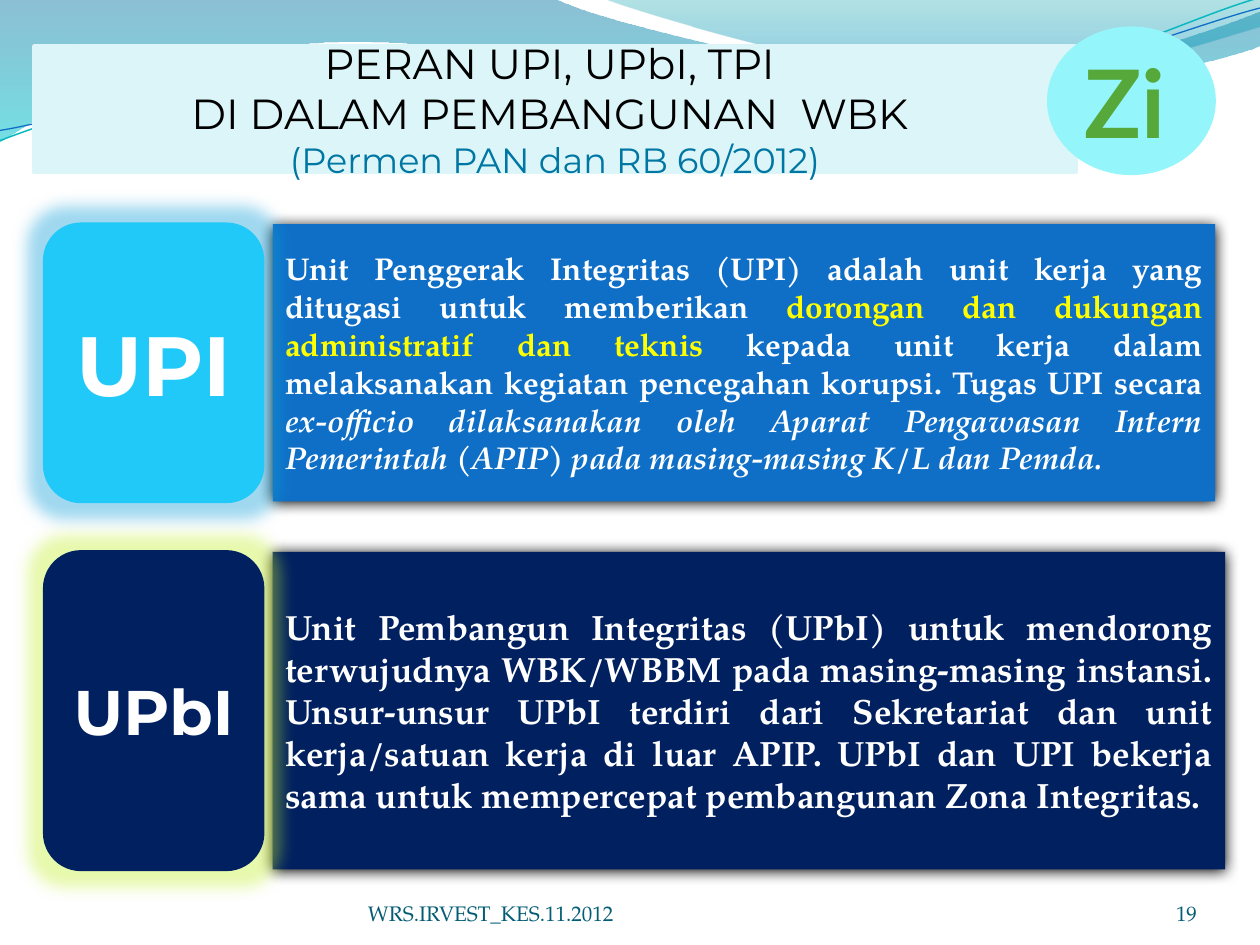
from lxml.etree import SubElement
from pptx import Presentation
from pptx.dml.color import RGBColor
from pptx.enum.shapes import MSO_SHAPE as SHAPE
from pptx.enum.text import MSO_ANCHOR as ANCHOR, MSO_AUTO_SIZE as AUTO, PP_ALIGN as ALIGN
from pptx.oxml.ns import qn
from pptx.util import Inches, Pt

COLS, ROWS = 100, 75
UNIT = Inches(10) // COLS
HEAD_FONT, BODY_FONT, BADGE_FONT = "Montserrat", "TeX Gyre Pagella", "Lato"

BLACK = RGBColor(0x00, 0x00, 0x00)
WHITE = RGBColor(0xFF, 0xFF, 0xFF)
YELLOW = RGBColor(0xFF, 0xFF, 0x00)
BLUE = RGBColor(0x0F, 0x6F, 0xC6)
SKY = RGBColor(0x20, 0xC9, 0xF8)
NAVY = RGBColor(0x00, 0x20, 0x60)
PALE = RGBColor(0xDB, 0xF5, 0xF9)
SUBTITLE = RGBColor(0x00, 0x76, 0xA3)
AQUA = RGBColor(0x94, 0xF5, 0xFA)
GREEN = RGBColor(0x55, 0xA8, 0x39)
FOOTER = RGBColor(0x04, 0x5D, 0x75)
TEAL = RGBColor(0x0A, 0xB8, 0xBF)
SKY_GLOW = RGBColor(0x0F, 0x9E, 0xD9)
LIME_GLOW = RGBColor(0xC4, 0xF0, 0x30)
BIG_WAVE = ((RGBColor(0x00, 0x74, 0xA1), 0, 45), (RGBColor(0x00, 0xC6, 0xCF), 1, 55))
SMALL_WAVE = ((RGBColor(0x00, 0xA1, 0xA9), 0, 30), (RGBColor(0x00, 0x8B, 0xBF), 0.8, 45))

UPI_TEXT = [
    ("Unit Penggerak Integritas (UPI) adalah unit kerja yang ditugasi untuk memberikan ", WHITE, False),
    ("dorongan dan dukungan administratif dan teknis ", YELLOW, False),
    ("kepada unit kerja dalam melaksanakan kegiatan pencegahan korupsi. Tugas UPI secara ", WHITE, False),
    ("ex-officio dilaksanakan oleh Aparat Pengawasan Intern Pemerintah (APIP) "
     "pada masing-masing K/L dan Pemda. ", WHITE, True)]
UPBI_TEXT = [
    ("Unit Pembangun Integritas (UPbI) untuk mendorong terwujudnya WBK/WBBM pada masing-masing "
     "instansi. Unsur-unsur UPbI terdiri dari Sekretariat dan unit kerja/satuan kerja di luar APIP. "
     "UPbI dan UPI bekerja sama untuk mempercepat pembangunan Zona Integritas. ", WHITE, False)]


def grid(*box):
    """Turn columns and rows into lengths."""
    return [round(v * UNIT) for v in box]


def style(r, size, font, color, bold=False, italic=False):
    """Format one run."""
    r.font.size, r.font.name = Pt(size), font
    r.font.bold, r.font.italic = bold, italic
    r.font.color.rgb = color


def add_effect(sp, tag, color, alpha, **attrs):
    """Give a shape a glow or shadow."""
    sp.shadow.inherit = False
    effects = sp._element.spPr.find(qn("a:effectLst"))
    effect = SubElement(effects, qn(tag), {k: str(v) for k, v in attrs.items()})
    clr = SubElement(effect, qn("a:srgbClr"), val=str(color))
    SubElement(clr, qn("a:alpha"), val=str(alpha * 1000))


def add_block(slide, kind, box, fill, outlined=False):
    """Add a flat filled shape with centred anchoring."""
    sp = slide.shapes.add_shape(kind, *grid(*box))
    sp.shadow.inherit = False
    sp.fill.solid()
    sp.fill.fore_color.rgb = fill
    if outlined:
        sp.line.color.rgb, sp.line.width = fill, Pt(2)
    else:
        sp.line.fill.background()
    sp.text_frame.word_wrap = True
    sp.text_frame.vertical_anchor = ANCHOR.MIDDLE
    return sp


def curves(*points):
    """Group points into cubic segments of two handles and an end."""
    return [points[i:i + 3] for i in range(0, len(points), 3)]


def add_outline(slide, start, segments, close):
    """Add a freeform of straight (one point) and cubic (three points) segments."""
    builder = slide.shapes.build_freeform(*grid(*start), scale=1.0)
    builder.add_line_segments([grid(*pt) for segment in segments for pt in segment], close=close)
    sp = builder.convert_to_shape()
    sp.shadow.inherit = False
    steps = iter(list(sp._element.iter(qn("a:lnTo"))))
    for segment in segments:
        first, *rest = [next(steps) for _ in segment]
        if rest:
            first.tag = qn("a:cubicBezTo")
        for step in rest:
            first.append(step[0])
            step.getparent().remove(step)
    return sp


def add_wave(slide, start, segments, stops):
    """Add a wave with a translucent vertical gradient."""
    sp = add_outline(slide, start, segments, True)
    sp.line.fill.background()
    sp.fill.gradient()
    sp.fill.gradient_angle = 270
    for stop, (color, position, _) in zip(sp.fill.gradient_stops, stops):
        stop.color.rgb, stop.position = color, position
    for clr, (_, _, alpha) in zip(sp._element.spPr.iter(qn("a:srgbClr")), stops):
        SubElement(clr, qn("a:alpha"), val=str(alpha * 1000))


def add_waves(slide):
    """Draw the banner of waves across the top."""
    lower = curves((47.6, 1.7), (66.4, 6.3), (75.8, 6.3), (85.3, 6.3), (95.8, 2.6), (100, 0.9))
    upper = curves((98.3, 4.4), (87, 7.6), (74.6, 7.5), (62.2, 7.5), (38.2, 2.8), (25.7, 3.4),
                   (12.9, 3.6), (4.6, 8.3), (-0.1, 11.3))
    add_wave(slide, (0, 0), [[(44, -0.1)], *lower, [(100.1, 3.6)], *upper], BIG_WAVE)
    corner = curves((50.9, 1.1), (68.2, 6.2), (76.9, 6.5), (85.6, 6.9), (96.1, 3.2), (100, 2.1))
    add_wave(slide, (47.9, -0.1), [*corner, [(100, 0)]], SMALL_WAVE)
    lines = [
        (TEAL, 0.85, (-0.2, 8.8), curves((4.6, 7.2), (15.8, 4.1), (27.7, 4.2), (39.5, 4.2), (59.2, 9.3),
                                         (71.2, 9), (83.2, 8.7), (94, 3.6), (100.1, 2.2))),
        (BLUE, 0.75, (-0.2, 8), curves((4.5, 7.5), (16.4, 4.5), (28.3, 4.6), (40.3, 4.6), (59.6, 8.9),
                                       (71.6, 8.5), (83.6, 8.3), (94.3, 4.2), (100.2, 3)))]
    for color, width, start, segments in lines:
        sp = add_outline(slide, start, segments, False)
        sp.rotation = 357.3
        sp.fill.background()
        sp.line.color.rgb, sp.line.width = color, Pt(width)


def add_title(slide, box):
    """Place the title placeholder as a pale banner."""
    title = slide.shapes.title
    title.element.getparent().append(title.element)
    title.left, title.top, title.width, title.height = grid(*box)
    title.fill.solid()
    title.fill.fore_color.rgb = PALE
    title.line.color.rgb, title.line.width = PALE, Pt(2)
    tf = title.text_frame
    tf.text = "PERAN UPI, UPbI, TPI \nDI DALAM PEMBANGUNAN  WBK \n(Permen PAN dan RB 60/2012)"
    tf.auto_size, tf.vertical_anchor = AUTO.NONE, ANCHOR.MIDDLE
    for p, (size, color) in zip(tf.paragraphs, [(24, BLACK), (24, BLACK), (20, SUBTITLE)]):
        p.alignment = ALIGN.CENTER
        p.space_before = Pt(0)
        style(p.runs[0], size, HEAD_FONT, color)


def add_badge(slide, box):
    """Add the round badge beside the title."""
    p = add_block(slide, SHAPE.OVAL, box, AQUA).text_frame.paragraphs[0]
    p.text, p.alignment = "Zi", ALIGN.LEFT
    style(p.runs[0], 54, BADGE_FONT, GREEN, bold=True)


def add_unit(slide, box, label, label_size, label_fill, glow, panel_fill, runs, size):
    """Add a description panel with its glowing label on the left."""
    left, top, width, height = box
    label_width, gap = 17.3, 0.8
    offset = label_width + gap
    panel = add_block(slide, SHAPE.RECTANGLE, (left + offset, top, width - offset, height), panel_fill)
    add_effect(panel, "a:outerShdw", BLACK, 100, blurRad=Pt(8.5), dist=Pt(1), dir=5400000, rotWithShape=0)
    p = panel.text_frame.paragraphs[0]
    p.alignment = ALIGN.JUSTIFY
    for text, color, italic in runs:
        r = p.add_run()
        r.text = text
        style(r, size, BODY_FONT, color, True, italic)
    tag = add_block(slide, SHAPE.ROUNDED_RECTANGLE, (left, top, label_width, height), label_fill, True)
    add_effect(tag, "a:glow", glow, 40, rad=Pt(18))
    p = tag.text_frame.paragraphs[0]
    p.text, p.alignment = label, ALIGN.CENTER
    style(p.runs[0], label_size, HEAD_FONT, WHITE, bold=True)


def add_footer(slide, box, text, align):
    """Add one footer entry resting on the bottom of its box."""
    tf = slide.shapes.add_textbox(*grid(*box)).text_frame
    tf.word_wrap, tf.vertical_anchor = True, ANCHOR.BOTTOM
    tf.margin_left = tf.margin_right = tf.margin_top = tf.margin_bottom = 0
    p = tf.paragraphs[0]
    p.text, p.alignment = text, align
    style(p.runs[0], 12, BODY_FONT, FOOTER)


def main():
    """Build and save the slide."""
    prs = Presentation()
    prs.slide_width, prs.slide_height = COLS * UNIT, ROWS * UNIT
    slide = prs.slides.add_slide(prs.slide_layouts[5])
    add_waves(slide)
    add_title(slide, (2.7, 3.65, 82.7, 10))
    add_unit(slide, (3.55, 17.8, 92.9, 22), "UPI", 48, SKY, SKY_GLOW, BLUE, UPI_TEXT, 18)
    add_unit(slide, (3.55, 43.8, 93.7, 25.2), "UPbI", 36, NAVY, LIME_GLOW, NAVY, UPBI_TEXT, 20)
    add_badge(slide, (83.1, 2.1, 13.4, 11.8))
    add_footer(slide, (29.2, 69.5, 36.7, 4), "WRS.IRVEST_KES.11.2012", ALIGN.LEFT)
    add_footer(slide, (86.7, 69.5, 8.3, 4), "19", ALIGN.RIGHT)
    prs.save("out.pptx")


if __name__ == "__main__":
    main()
